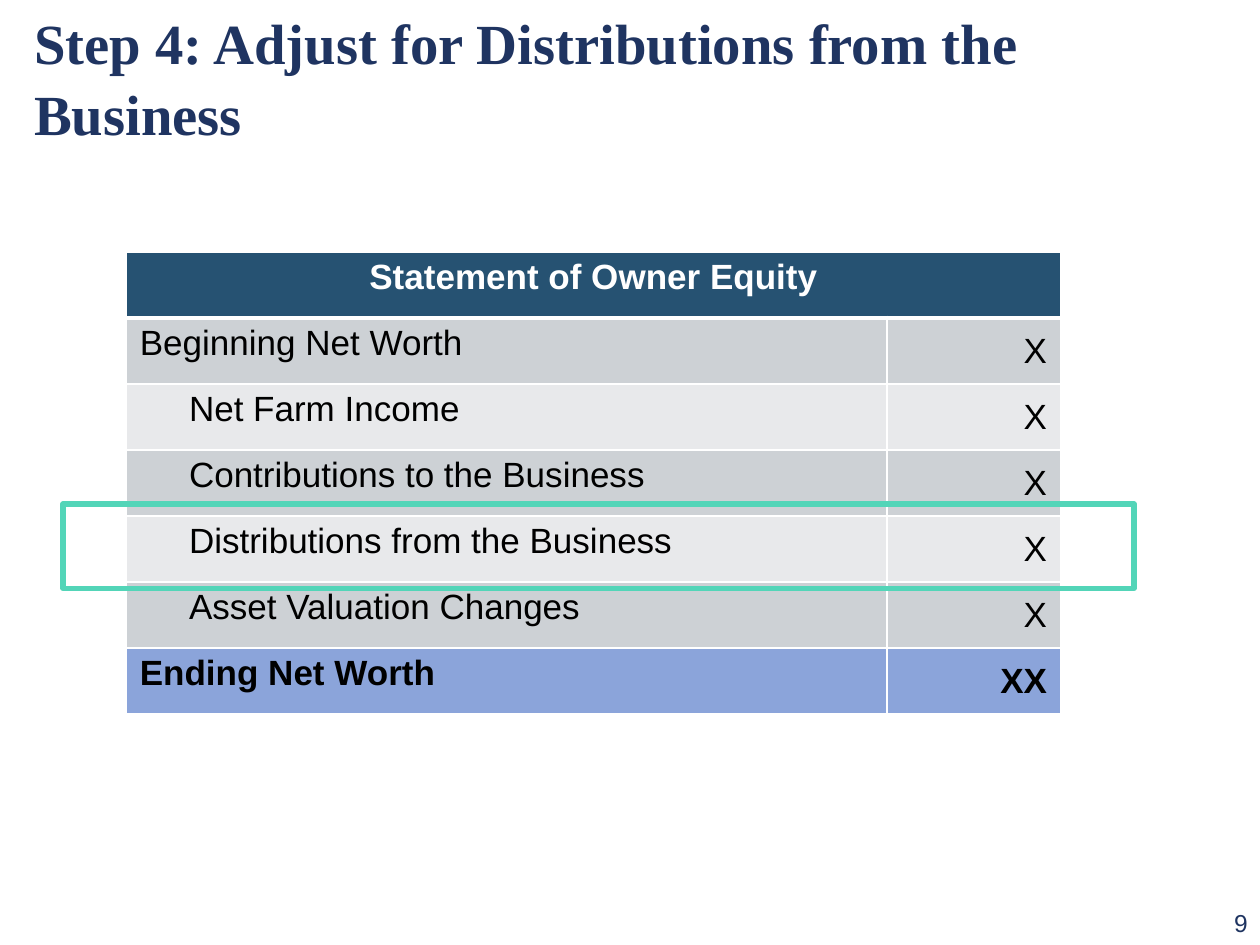
from dataclasses import dataclass

from lxml import etree
from pptx import Presentation
from pptx import util as u
from pptx.dml.color import RGBColor
from pptx.enum import shapes, text
from pptx.oxml.ns import qn


@dataclass(frozen=True)
class Theme:
    heading_font: str = "Times New Roman"
    body_font: str = "Arial"
    navy: str = "1F3461"
    white: str = "FFFFFF"
    black: str = "000000"
    header: str = "265272"
    bands: tuple = ("CDD1D5", "E8E9EB")
    total: str = "8BA4DA"
    highlight: str = "53D5B8"
    title_size: float = 32.4
    table_size: float = 20
    number_size: float = 14


@dataclass(frozen=True)
class Entry:
    label: str
    value: str = "X"
    indented: bool = False
    total: bool = False


THEME = Theme()
ALIGN = text.PP_ALIGN
MIDDLE = text.MSO_ANCHOR.MIDDLE
CELL_INSET = 0.11
INDENTED_INSET = 0.5
COLUMN_WIDTHS = (6.04, 1.38)
ROW_HEIGHT = 0.524

ENTRIES = [
    Entry("Beginning Net Worth"),
    Entry("Net Farm Income", indented=True),
    Entry("Contributions to the Business", indented=True),
    Entry("Distributions from the Business", indented=True),
    Entry("Asset Valuation Changes", indented=True),
    Entry("Ending Net Worth", "XX", total=True),
]


def style(para, size: float, color: str, name: str = THEME.body_font,
          bold: bool = False, align=ALIGN.LEFT) -> None:
    para.alignment = align
    para.font.name = name
    para.font.size = u.Pt(size)
    para.font.bold = bold
    para.font.color.rgb = RGBColor.from_string(color)


def add_borders(cell, bottom: float = 1, top: float = 1) -> None:
    """Draw white cell edges, placed ahead of the fill as the schema requires."""
    properties = cell._tc.get_or_add_tcPr()
    widths = {"a:lnL": 1, "a:lnR": 1, "a:lnT": top, "a:lnB": bottom}
    for position, (tag, width) in enumerate(widths.items()):
        line = etree.Element(qn(tag), w=str(u.Pt(width)))
        fill = etree.SubElement(line, qn("a:solidFill"))
        etree.SubElement(fill, qn("a:srgbClr"), val=THEME.white)
        properties.insert(position, line)


def fill_cell(cell, words: str, fill: str, color: str, bold: bool,
              align, inset: float = CELL_INSET) -> None:
    cell.text = words
    cell.margin_left = u.Inches(inset)
    cell.margin_right = u.Inches(CELL_INSET)
    cell.margin_top = cell.margin_bottom = u.Inches(0.05)
    cell.fill.solid()
    cell.fill.fore_color.rgb = RGBColor.from_string(fill)
    style(cell.text_frame.paragraphs[0], THEME.table_size, color,
          bold=bold, align=align)


def add_title(slide, words: str) -> None:
    title = slide.shapes.title
    title.left, title.top = u.Inches(0.17), u.Inches(0.17)
    title.width, title.height = u.Inches(8.75), u.Inches(0.87)
    frame = title.text_frame
    frame.text = words
    frame.auto_size = text.MSO_AUTO_SIZE.NONE
    frame.vertical_anchor = MIDDLE
    para = frame.paragraphs[0]
    para.line_spacing = 1.04
    style(para, THEME.title_size, THEME.navy, THEME.heading_font, bold=True)


def add_statement(slide, heading: str, entries: list[Entry]) -> None:
    rows = len(entries) + 1
    table = slide.shapes.add_table(
        rows, len(COLUMN_WIDTHS), u.Inches(1), u.Inches(2),
        u.Inches(sum(COLUMN_WIDTHS)), u.Inches(rows * ROW_HEIGHT)).table
    for column, width in zip(table.columns, COLUMN_WIDTHS):
        column.width = u.Inches(width)
    for row in table.rows:
        row.height = u.Inches(ROW_HEIGHT)

    header = table.cell(0, 0)
    header.merge(table.cell(0, 1))
    fill_cell(header, heading, THEME.header, THEME.white, True, ALIGN.CENTER)
    for index, entry in enumerate(entries):
        label, value = table.rows[index + 1].cells
        fill = THEME.total if entry.total else THEME.bands[index % 2]
        inset = INDENTED_INSET if entry.indented else CELL_INSET
        fill_cell(label, entry.label, fill, THEME.black, entry.total,
                  ALIGN.LEFT, inset)
        fill_cell(value, entry.value, fill, THEME.black, entry.total,
                  ALIGN.RIGHT)
        value.vertical_anchor = MIDDLE

    for index, row in enumerate(table.rows):
        for cell in row.cells:
            add_borders(cell, bottom=3 if index == 0 else 1,
                        top=3 if index == 1 else 1)


def add_highlight(slide) -> None:
    frame = slide.shapes.add_shape(
        shapes.MSO_SHAPE.RECTANGLE, u.Inches(0.5), u.Inches(4),
        u.Inches(8.5), u.Inches(0.67))
    frame.shadow.inherit = False
    frame.fill.background()
    frame.line.color.rgb = RGBColor.from_string(THEME.highlight)
    frame.line.width = u.Pt(3)


def add_page_number(slide, number: str) -> None:
    box = slide.shapes.add_textbox(
        u.Inches(9.42), u.Inches(7.16), u.Inches(0.58), u.Inches(0.34))
    box.text_frame.word_wrap = True
    box.text_frame.text = number
    style(box.text_frame.paragraphs[0], THEME.number_size, THEME.navy,
          align=ALIGN.RIGHT)


def main() -> None:
    deck = Presentation()
    deck.slide_width, deck.slide_height = u.Inches(10), u.Inches(7.5)
    slide = deck.slides.add_slide(deck.slide_layouts.get_by_name("Title Only"))
    add_page_number(slide, "9")
    add_title(slide, "Step 4: Adjust for Distributions from the Business")
    add_statement(slide, "Statement of Owner Equity", ENTRIES)
    add_highlight(slide)
    deck.save("out.pptx")


if __name__ == "__main__":
    main()
